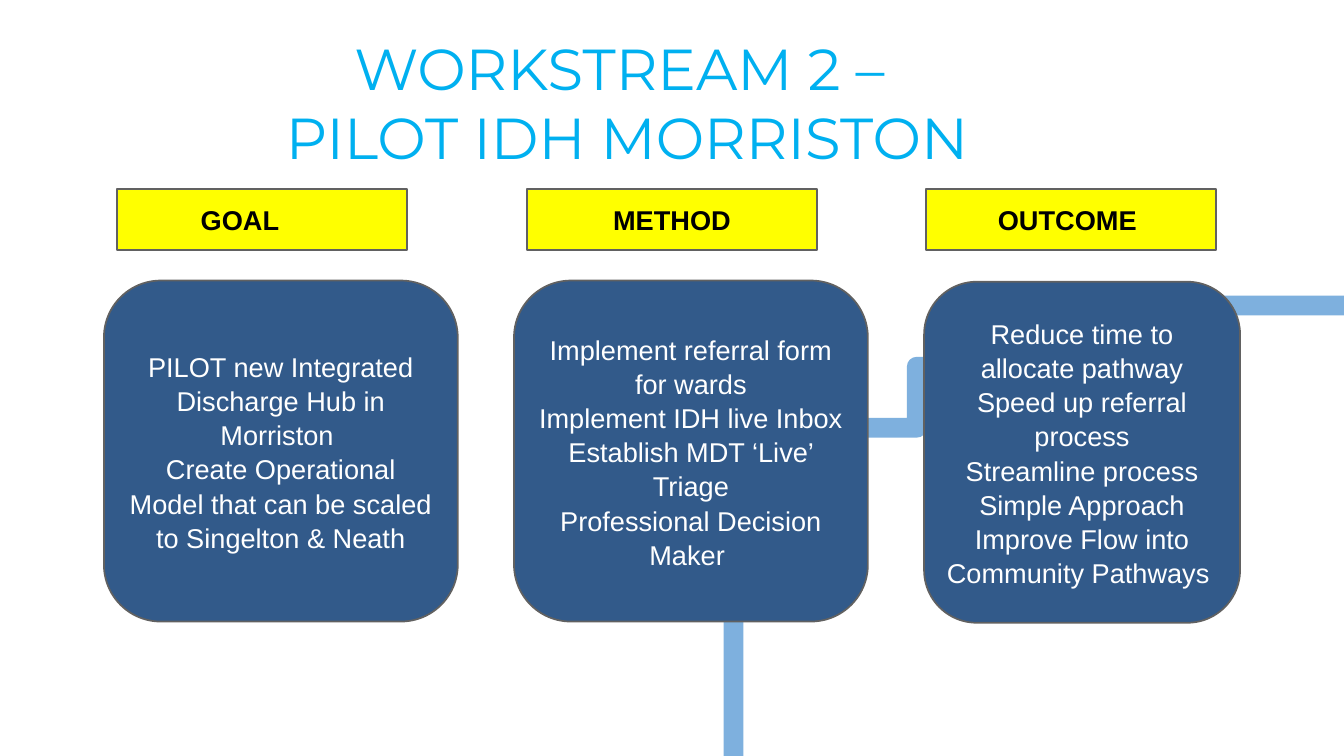
from pptx import Presentation
from pptx.dml.color import RGBColor
from pptx.enum.shapes import MSO_SHAPE
from pptx.enum.text import MSO_ANCHOR, PP_ALIGN
from pptx.util import Inches, Pt

CENTER = PP_ALIGN.CENTER
MIDDLE = MSO_ANCHOR.MIDDLE
RECTANGLE = MSO_SHAPE.RECTANGLE
ROUNDED = MSO_SHAPE.FLOWCHART_ALTERNATE_PROCESS

COLORS = {
    "background": "FFFFFF", "ribbon": "7EB0DE", "title": "00B0F0",
    "card": "325A8A", "card_text": "FFFFFF",
    "label": "FFFF00", "label_text": "000000", "border": "616161",
}
SLIDE_WIDTH, SLIDE_HEIGHT = 21.99, 12.37
LABEL_TOP, LABEL_WIDTH, LABEL_HEIGHT = 3.09, 4.75, 1
CARD_HEIGHT = 5.58

# Cubic curves of the background ribbon: start, two handles, end
RIBBON_CURVES = [
    [(23.06, 4.14), (20.35, 6.15), (14.73, 5.39), (12.61, 8.35)],
    [(12.61, 8.35), (10.56, 11.22), (14.14, 16.02), (14.23, 20.37)],
]

# Heading, label left, extra right inset, card left, top and width, card lines
COLUMNS = [
    ("GOAL ", 1.91, 0.6, 1.7, 4.59, 5.79, [
        "PILOT new Integrated Discharge Hub in Morriston ",
        "Create Operational Model that can be scaled to Singelton & Neath"]),
    ("METHOD", 8.62, 0, 8.41, 4.59, 5.79, [
        "Implement referral form for wards",
        "Implement IDH live Inbox",
        "Establish MDT ‘Live’ Triage",
        "Professional Decision Maker "]),
    ("OUTCOME ", 15.15, 0, 15.12, 4.61, 5.17, [
        "Reduce time to allocate pathway",
        "Speed up referral process",
        "Streamline process",
        "Simple Approach",
        "Improve Flow into Community Pathways "]),
]


def color(name):
    return RGBColor.from_string(COLORS[name])


def write_lines(frame, lines, font, size, color_name, bold=False, spacing=None):
    frame.word_wrap = True
    for index, line in enumerate(lines):
        para = frame.paragraphs[0] if index == 0 else frame.add_paragraph()
        para.alignment = CENTER
        if spacing:
            para.line_spacing = spacing
        span = para.add_run()
        span.text = line
        span.font.name = font
        span.font.size = Pt(size)
        span.font.bold = bold
        span.font.color.rgb = color(color_name)


def curve_point(curve, t):
    weights = ((1 - t) ** 3, 3 * t * (1 - t) ** 2, 3 * t ** 2 * (1 - t), t ** 3)
    return tuple(sum(w * point[axis] for w, point in zip(weights, curve))
                 for axis in (0, 1))


def add_ribbon(page, steps=60):
    points = [curve_point(curve, step / steps)
              for curve in RIBBON_CURVES for step in range(steps + 1)]
    # Keep the stretch that crosses the slide, with a small overrun at each edge
    points = [(x, y) for x, y in points
              if x < SLIDE_WIDTH + 0.6 and y < SLIDE_HEIGHT + 0.6]
    builder = page.shapes.build_freeform(*points[0], scale=Inches(1))
    builder.add_line_segments(points[1:], close=False)
    ribbon = builder.convert_to_shape()
    ribbon.shadow.inherit = False
    ribbon.fill.background()
    ribbon.line.color.rgb = color("ribbon")
    ribbon.line.width = Pt(23.25)


def add_title(page, left, top, width, height):
    box = page.shapes.add_textbox(Inches(left), Inches(top),
                                  Inches(width), Inches(height))
    box.text_frame.margin_top = Inches(0.1)
    write_lines(box.text_frame, ["WORKSTREAM 2 – ", "PILOT IDH MORRISTON"],
                "Montserrat", 68, "title")


def add_panel(page, kind, left, top, width, height, fill):
    panel = page.shapes.add_shape(kind, Inches(left), Inches(top),
                                  Inches(width), Inches(height))
    panel.shadow.inherit = False
    panel.fill.solid()
    panel.fill.fore_color.rgb = color(fill)
    panel.line.color.rgb = color("border")
    panel.line.width = Pt(2)
    panel.text_frame.vertical_anchor = MIDDLE
    return panel.text_frame


def add_column(page, heading, label_left, extra_inset,
               card_left, card_top, card_width, lines):
    # Card
    frame = add_panel(page, ROUNDED, card_left, card_top,
                      card_width, CARD_HEIGHT, "card")
    write_lines(frame, lines, "Arial", 32, "card_text", spacing=1.05)
    # Heading label
    frame = add_panel(page, RECTANGLE, label_left, LABEL_TOP,
                      LABEL_WIDTH, LABEL_HEIGHT, "label")
    frame.margin_right = Inches(0.1 + extra_inset)
    write_lines(frame, [heading], "Arial", 32, "label_text", bold=True)


def main():
    deck = Presentation()
    deck.slide_width = Inches(SLIDE_WIDTH)
    deck.slide_height = Inches(SLIDE_HEIGHT)
    page = deck.slides.add_slide(deck.slide_layouts[6])
    page.background.fill.solid()
    page.background.fill.fore_color.rgb = color("background")

    add_ribbon(page)
    add_title(page, 0.74, 0.43, 19.04, 2.6)
    for column in COLUMNS:
        add_column(page, *column)
    deck.save("out.pptx")


if __name__ == "__main__":
    main()
